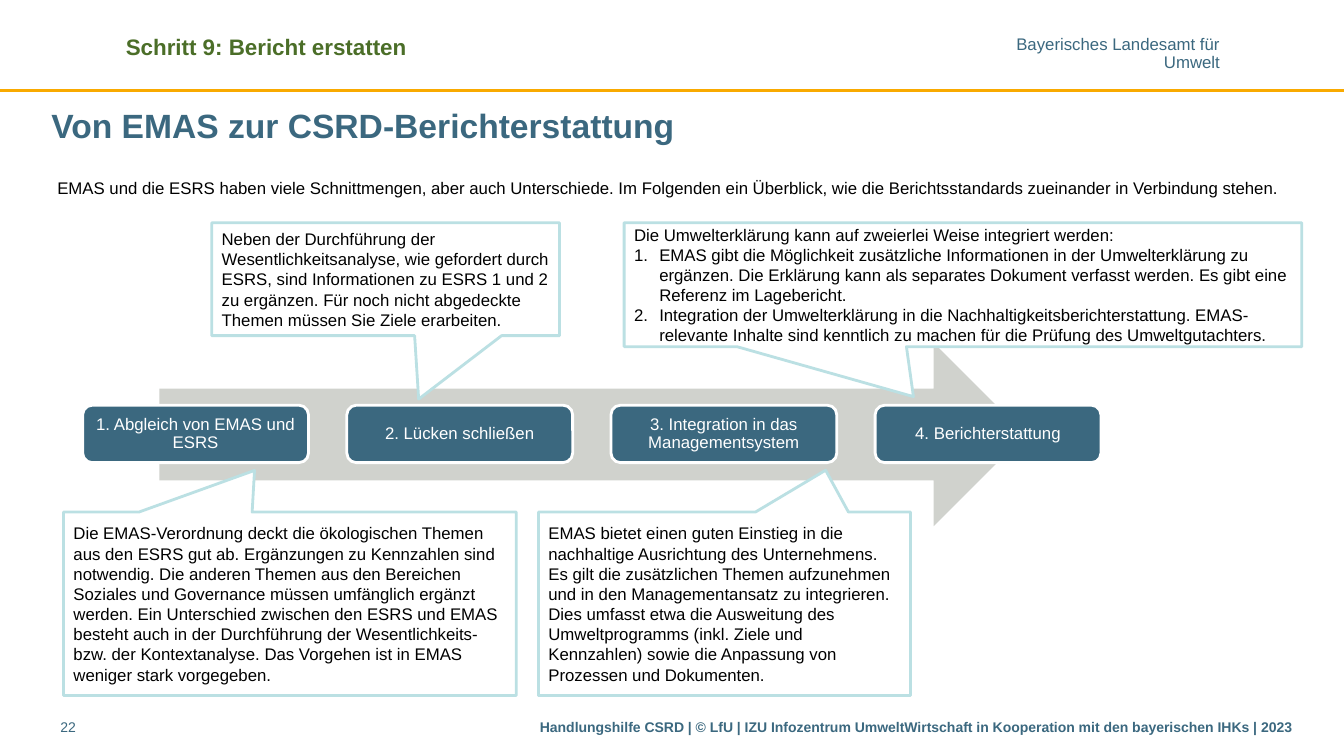
from lxml import etree
from pptx import Presentation
from pptx.dml.color import RGBColor
from pptx.enum.shapes import MSO_CONNECTOR, MSO_SHAPE
from pptx.enum.text import MSO_ANCHOR, PP_ALIGN
from pptx.oxml.ns import qn
from pptx.util import Inches, Pt

BLUE = RGBColor(0x3B, 0x68, 0x7F)
GREEN = RGBColor(0x4B, 0x6E, 0x28)
YELLOW = RGBColor(0xF9, 0xAA, 0x00)
GREY = RGBColor(0xD0, 0xD2, 0xCD)
LIGHT_BLUE = RGBColor(0xBB, 0xE0, 0xE3)
WHITE = RGBColor(0xFF, 0xFF, 0xFF)
BLACK = RGBColor(0x00, 0x00, 0x00)

LEFT, CENTER, RIGHT = PP_ALIGN.LEFT, PP_ALIGN.CENTER, PP_ALIGN.RIGHT
TOP, MIDDLE = MSO_ANCHOR.TOP, MSO_ANCHOR.MIDDLE
ARROW = MSO_SHAPE.RIGHT_ARROW
ROUNDED = MSO_SHAPE.ROUNDED_RECTANGLE
CALLOUT = MSO_SHAPE.RECTANGULAR_CALLOUT

STEPS = [
    "1. Abgleich von EMAS und ESRS",
    "2. Lücken schließen",
    "3. Integration in das Managementsystem",
    "4. Berichterstattung",
]
STEP_LEFT, STEP_PITCH = 0.82, 2.62

# Box (left, top, width, height), pointer offset, paragraphs
CALLOUTS = [
    ((0.63, 5.08, 4.49, 1.82), (-0.078, -0.727), [
        "Die EMAS-Verordnung deckt die ökologischen Themen aus den ESRS gut ab. "
        "Ergänzungen zu Kennzahlen sind notwendig. Die anderen Themen aus den "
        "Bereichen Soziales und Governance müssen umfänglich ergänzt werden. Ein "
        "Unterschied zwischen den ESRS und EMAS besteht auch in der Durchführung "
        "der Wesentlichkeits- bzw. der Kontextanalyse. Das Vorgehen ist in EMAS "
        "weniger stark vorgegeben."]),
    ((2.1, 2.21, 3.45, 1.12), (0.095, 1.062), [
        "Neben der Durchführung der Wesentlichkeitsanalyse, wie gefordert durch "
        "ESRS, sind Informationen zu ESRS 1 und 2 zu ergänzen. Für noch nicht "
        "abgedeckte Themen müssen Sie Ziele erarbeiten."]),
    ((5.34, 5.08, 3.69, 1.82), (0.272, -0.728), [
        "EMAS bietet einen guten Einstieg in die nachhaltige Ausrichtung des "
        "Unternehmens. Es gilt die zusätzlichen Themen aufzunehmen und in den "
        "Managementansatz zu integrieren. Dies umfasst etwa die Ausweitung des "
        "Umweltprogramms (inkl. Ziele und Kennzahlen) sowie die Anpassung von "
        "Prozessen und Dokumenten."]),
    ((6.19, 2.21, 6.72, 1.23), (-0.073, 0.903), [
        "Die Umwelterklärung kann auf zweierlei Weise integriert werden:",
        "EMAS gibt die Möglichkeit zusätzliche Informationen in der "
        "Umwelterklärung zu ergänzen. Die Erklärung kann als separates Dokument "
        "verfasst werden. Es gibt eine Referenz im Lagebericht.",
        "Integration der Umwelterklärung in die Nachhaltigkeitsberichterstattung. "
        "EMAS-relevante Inhalte sind kenntlich zu machen für die Prüfung des "
        "Umweltgutachters."]),
]


def number_paragraph(paragraph):
    """Give the paragraph a hanging automatic number (1., 2., ...)."""
    properties = paragraph._p.get_or_add_pPr()
    properties.set("marL", str(Inches(0.25)))
    properties.set("indent", str(Inches(-0.25)))
    etree.SubElement(properties, qn("a:buFont"), typeface="+mj-lt")
    etree.SubElement(properties, qn("a:buAutoNum"), type="arabicPeriod")


def write(frame, paragraphs, size=12, color=BLACK, bold=False, align=LEFT,
          anchor=TOP, inset=0.1, spacing=None, wrap=True):
    """Fill a text frame; paragraphs after the first may be numbered later."""
    frame.text = "\n".join(paragraphs)
    frame.word_wrap = wrap
    frame.vertical_anchor = anchor
    frame.margin_left = frame.margin_right = Inches(inset)
    for paragraph in frame.paragraphs:
        paragraph.alignment = align
        if spacing:
            paragraph.line_spacing = spacing
        for run in paragraph.runs:
            run.font.name = "Arial"
            run.font.size = Pt(size)
            run.font.bold = bold
            run.font.color.rgb = color


def add_text(slide, box, *paragraphs, **style):
    frame = slide.shapes.add_textbox(*map(Inches, box)).text_frame
    write(frame, paragraphs, **style)
    return frame


def add_filled_shape(slide, kind, box, fill, outline=None):
    shape = slide.shapes.add_shape(kind, *map(Inches, box))
    shape.shadow.inherit = False
    shape.fill.solid()
    shape.fill.fore_color.rgb = fill
    if outline is None:
        shape.line.fill.background()
    else:
        shape.line.color.rgb = outline
        shape.line.width = Pt(2)
    return shape


def add_header_rule(slide):
    rule = slide.shapes.add_connector(
        MSO_CONNECTOR.STRAIGHT, 0, Inches(0.9), Inches(13.33), Inches(0.9))
    rule.line.color.rgb = YELLOW
    rule.line.width = Pt(2)
    etree.SubElement(rule._element.spPr, qn("a:effectLst"))


def add_step(slide, index, label):
    box = (STEP_LEFT + index * STEP_PITCH, 4.02, 2.24, 0.57)
    step = add_filled_shape(slide, ROUNDED, box, BLUE, WHITE)
    write(step.text_frame, [label], color=WHITE, align=CENTER, anchor=MIDDLE,
          inset=0.05, spacing=0.9)


def add_callout(slide, box, pointer, paragraphs):
    callout = add_filled_shape(slide, CALLOUT, box, WHITE, LIGHT_BLUE)
    callout.adjustments[0], callout.adjustments[1] = pointer
    write(callout.text_frame, paragraphs, anchor=MIDDLE)
    for paragraph in callout.text_frame.paragraphs[1:]:
        number_paragraph(paragraph)


def main():
    presentation = Presentation()
    presentation.slide_width = Inches(13.33)
    presentation.slide_height = Inches(7.5)
    slide = presentation.slides.add_slide(presentation.slide_layouts[6])

    add_header_rule(slide)
    agency = add_text(slide, (10.07, 0.37, 2.03, 0.34),
                      "Bayerisches Landesamt für", "Umwelt", color=BLUE,
                      align=RIGHT, inset=0, spacing=0.85, wrap=False)
    agency.margin_top = agency.margin_bottom = 0
    add_text(slide, (1.15, 0.28, 5.91, 0.37), "Schritt 9: Bericht erstatten",
             size=16, color=GREEN, bold=True)
    add_text(slide, (0.51, 0.97, 12.31, 0.55),
             "Von EMAS zur CSRD-Berichterstattung",
             size=24, color=BLUE, bold=True, anchor=MIDDLE, inset=0)
    add_text(slide, (0.47, 1.71, 12.44, 0.3),
             "EMAS und die ESRS haben viele Schnittmengen, aber auch "
             "Unterschiede. Im Folgenden ein Überblick, wie die "
             "Berichtsstandards zueinander in Verbindung stehen.")

    add_filled_shape(slide, ARROW, (1.58, 3.4, 8.59, 1.82), GREY)
    for index, label in enumerate(STEPS):
        add_step(slide, index, label)
    for box, pointer, paragraphs in CALLOUTS:
        add_callout(slide, box, pointer, paragraphs)

    add_text(slide, (0.6, 7.08, 0.7, 0.31), "22", size=10, color=BLUE, inset=0)
    add_text(slide, (5.17, 7.08, 7.74, 0.31),
             "Handlungshilfe CSRD | © LfU | IZU Infozentrum UmweltWirtschaft "
             "in Kooperation mit den bayerischen IHKs | 2023",
             size=10, color=BLUE, bold=True, align=RIGHT)
    presentation.save("out.pptx")


if __name__ == "__main__":
    main()
